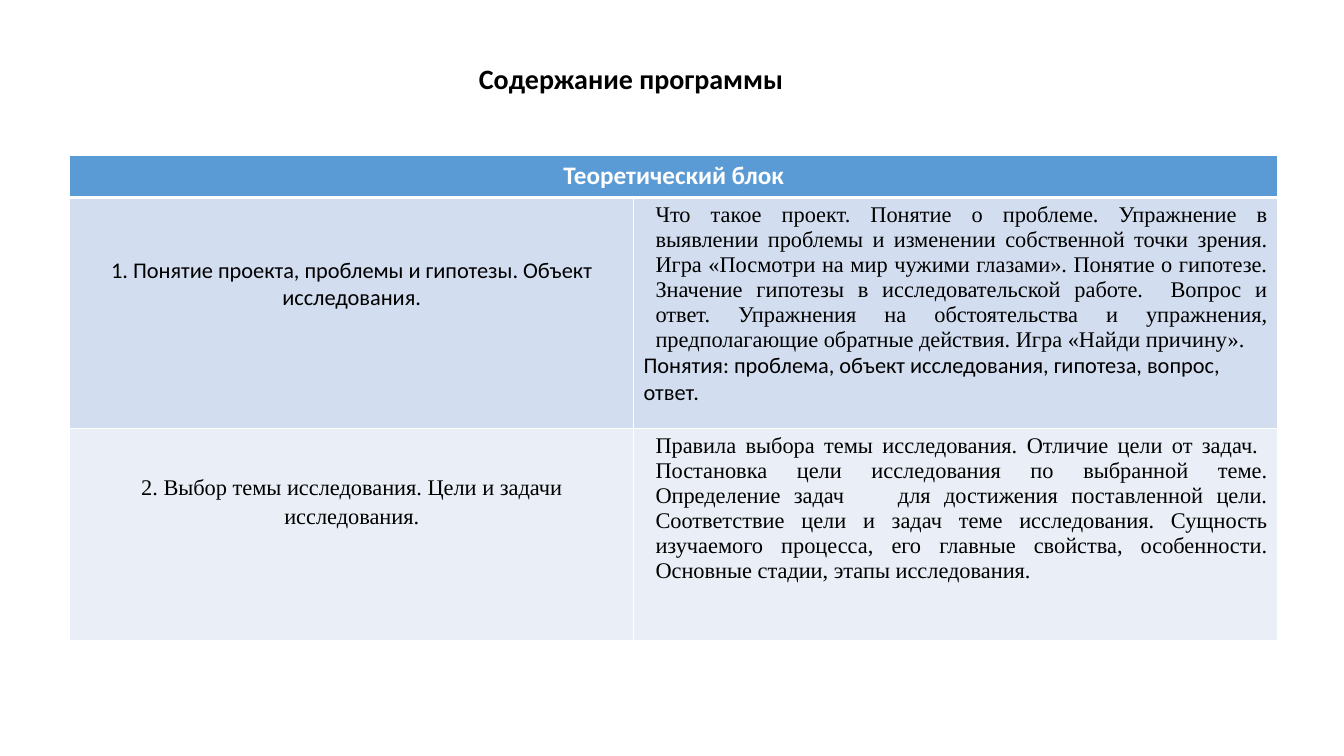
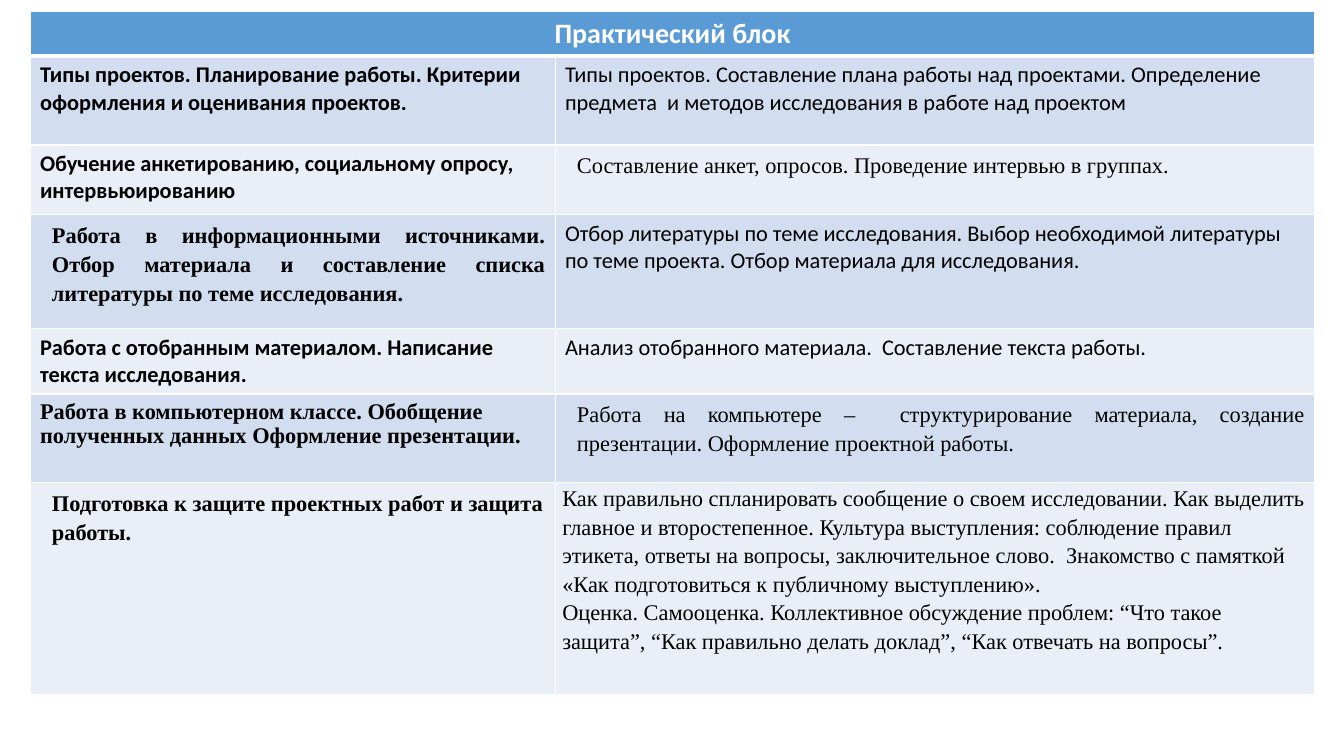
from dataclasses import dataclass

from lxml.etree import SubElement
from pptx import Presentation
from pptx.dml.color import RGBColor
from pptx.enum.text import MSO_ANCHOR, MSO_AUTO_SIZE, PP_ALIGN as Align
from pptx.oxml.ns import qn
from pptx.util import Cm, Pt


# Shared look
@dataclass(frozen=True)
class Theme:
    sans: str = "Calibri"
    serif: str = "Times New Roman"
    text: str = "000000"
    white: str = "FFFFFF"
    header: str = "5B9BD5"
    bands: tuple = ("D2DEEF", "EAEFF7")
    title_size: int = 20
    body_size: int = 16
    border: int = 1
    header_border: int = 3
    indent: float = 0.3
    loose: float = 1.15


THEME = Theme()
TITLE_ONLY, BLANK = 5, 6


@dataclass(frozen=True)
class Text:
    """One paragraph of a table cell."""
    words: str
    font: str = THEME.sans
    bold: bool = False
    align: Align = Align.LEFT
    indent: float = 0
    line: float = 1.0
    after: int = 0
    size: int = THEME.body_size
    color: str = THEME.text


@dataclass(frozen=True)
class Cell:
    """Paragraphs of a cell, with its margins in centimetres."""
    texts: tuple
    top: float = 0.13
    side: float = 0.25
    bottom: float = 0.13


def cell(*texts, **margins):
    return Cell(texts, **margins)


def serif(words, **options):
    return Text(words, font=THEME.serif, **options)


def justified(words, **options):
    return serif(words, align=Align.JUSTIFY, indent=THEME.indent, **options)


def format_runs(paragraph, font, size, color, bold):
    for run in paragraph.runs:
        run.font.name = font
        run.font.size = Pt(size)
        run.font.bold = bold
        run.font.color.rgb = RGBColor.from_string(color)


def add_title(slide, words, left, top, width, height):
    title = slide.shapes.title
    title.left, title.top, title.width, title.height = map(Cm, (left, top, width, height))
    frame = title.text_frame
    frame.text = words
    frame.word_wrap = False
    frame.auto_size = MSO_AUTO_SIZE.NONE
    frame.vertical_anchor = MSO_ANCHOR.TOP
    paragraph = frame.paragraphs[0]
    paragraph.alignment = Align.CENTER
    format_runs(paragraph, THEME.sans, THEME.title_size, THEME.text, True)


# Table parts
def set_borders(table_cell, top, bottom):
    properties = table_cell._tc.get_or_add_tcPr()
    widths = {"a:lnL": THEME.border, "a:lnR": THEME.border, "a:lnT": top, "a:lnB": bottom}
    for position, (side, width) in enumerate(widths.items()):
        line = SubElement(properties, qn(side), w=str(Pt(width)))
        SubElement(SubElement(line, qn("a:solidFill")), qn("a:srgbClr"), val=THEME.white)
        properties.insert(position, line)


def paint(table_cell, color, top=THEME.border, bottom=THEME.border):
    table_cell.fill.solid()
    table_cell.fill.fore_color.rgb = RGBColor.from_string(color)
    set_borders(table_cell, top, bottom)


def fill_text(table_cell, content):
    table_cell.margin_left = table_cell.margin_right = Cm(content.side)
    table_cell.margin_top, table_cell.margin_bottom = Cm(content.top), Cm(content.bottom)
    frame = table_cell.text_frame
    frame.text = "\n".join(text.words for text in content.texts)
    for paragraph, text in zip(frame.paragraphs, content.texts):
        paragraph.alignment = text.align
        paragraph.line_spacing = text.line
        paragraph.space_after = Pt(text.after)
        if text.indent:
            properties = paragraph._p.get_or_add_pPr()
            properties.set("marL", str(Cm(text.indent)))
            properties.set("indent", "0")
        format_runs(paragraph, text.font, text.size, text.color, text.bold)


def add_block(slide, heading, heading_size, rows, left, top, widths, heights):
    """Table with one merged heading row above banded rows."""
    frame = slide.shapes.add_table(len(heights), len(widths), Cm(left), Cm(top),
                                   Cm(sum(widths)), Cm(sum(heights)))
    table = frame.table
    for column, width in zip(table.columns, widths):
        column.width = Cm(width)
    for row, height in zip(table.rows, heights):
        row.height = Cm(height)

    for heading_cell in table.rows[0].cells:
        paint(heading_cell, THEME.header, bottom=THEME.header_border)
    table.cell(0, 0).merge(table.cell(0, len(widths) - 1))
    fill_text(table.cell(0, 0), cell(Text(heading, bold=True, align=Align.CENTER,
                                          size=heading_size, color=THEME.white)))

    for number, contents in enumerate(rows):
        above = THEME.border if number else THEME.header_border
        for column, content in enumerate(contents):
            table_cell = table.cell(number + 1, column)
            paint(table_cell, THEME.bands[number % 2], top=above)
            fill_text(table_cell, content)


# Contents
THEORY = (
    (cell(Text("1. Понятие проекта, проблемы и гипотезы. Объект исследования.",
               align=Align.CENTER), top=1.5),
     cell(justified("Что такое проект. Понятие о проблеме. Упражнение в выявлении проблемы и "
                    "изменении собственной точки зрения. Игра «Посмотри на мир чужими глазами». "
                    "Понятие о гипотезе. Значение гипотезы в исследовательской работе.  Вопрос "
                    "и ответ. Упражнения на обстоятельства и упражнения, предполагающие обратные "
                    "действия. Игра «Найди причину»."),
          Text("Понятия: проблема, объект исследования, гипотеза, вопрос, ответ."))),
    (cell(serif("2. Выбор темы исследования. Цели и задачи исследования.",
                align=Align.CENTER, line=THEME.loose, after=10), top=1.1),
     cell(justified("Правила выбора темы исследования. Отличие цели от задач.  Постановка цели "
                    "исследования по выбранной теме. Определение задач    для достижения "
                    "поставленной цели. Соответствие цели и задач теме исследования. Сущность "
                    "изучаемого процесса, его главные свойства, особенности. Основные стадии, "
                    "этапы исследования.", after=10))),
)

PRACTICE = (
    (cell(Text("Типы проектов. Планирование работы. Критерии оформления и оценивания проектов.",
               bold=True)),
     cell(Text("Типы проектов. Составление плана работы над проектами. Определение  предмета  "
               "и методов исследования в работе над проектом"))),
    (cell(Text("Обучение анкетированию, социальному опросу, интервьюированию", bold=True)),
     cell(justified("Составление анкет, опросов. Проведение интервью в группах.",
                    line=THEME.loose))),
    (cell(justified("Работа в информационными источниками. Отбор материала и составление списка "
                    "литературы по теме исследования.", bold=True, line=THEME.loose)),
     cell(Text("Отбор литературы по теме исследования. Выбор необходимой литературы по теме "
               "проекта. Отбор материала для исследования."))),
    (cell(Text("Работа с отобранным материалом. Написание текста исследования.", bold=True)),
     cell(Text("Анализ отобранного материала.  Составление текста работы."))),
    (cell(serif("Работа в компьютерном классе. Обобщение полученных данных Оформление "
                "презентации.", bold=True)),
     cell(justified("Работа на компьютере –  структурирование материала, создание презентации. "
                    "Оформление проектной работы.", line=THEME.loose, after=10))),
    (cell(serif("Подготовка к защите проектных работ и защита работы.", bold=True,
                indent=THEME.indent, line=THEME.loose)),
     cell(serif("Как правильно спланировать сообщение о своем исследовании. Как выделить главное "
                "и второстепенное. Культура выступления: соблюдение правил этикета, ответы на "
                "вопросы, заключительное слово.  Знакомство с памяткой «Как подготовиться к "
                "публичному выступлению».", line=THEME.loose),
          serif("Оценка. Самооценка. Коллективное обсуждение проблем: “Что такое защита”, "
                "“Как правильно делать доклад”, “Как отвечать на вопросы”.", line=THEME.loose),
          top=0, side=0.18, bottom=0)),
)


def main():
    presentation = Presentation()
    presentation.slide_width, presentation.slide_height = Cm(33.87), Cm(19.05)
    layouts = presentation.slide_layouts

    # Theory
    slide = presentation.slides.add_slide(layouts[TITLE_ONLY])
    add_title(slide, "Содержание программы", 11.79, 1.42, 8.23, 1.88)
    add_block(slide, "Теоретический блок", 18, THEORY, left=1.76, top=3.92,
              widths=(14.21, 16.23), heights=(1.06, 5.82, 5.34))

    # Practice
    slide = presentation.slides.add_slide(layouts[BLANK])
    add_block(slide, "Практический блок", 20, PRACTICE, left=0.76, top=0.29,
              widths=(13.23, 19.15), heights=(1.06, 2.24, 1.76, 2.87, 1.58, 2.24, 5.34))

    presentation.save("out.pptx")


if __name__ == "__main__":
    main()
